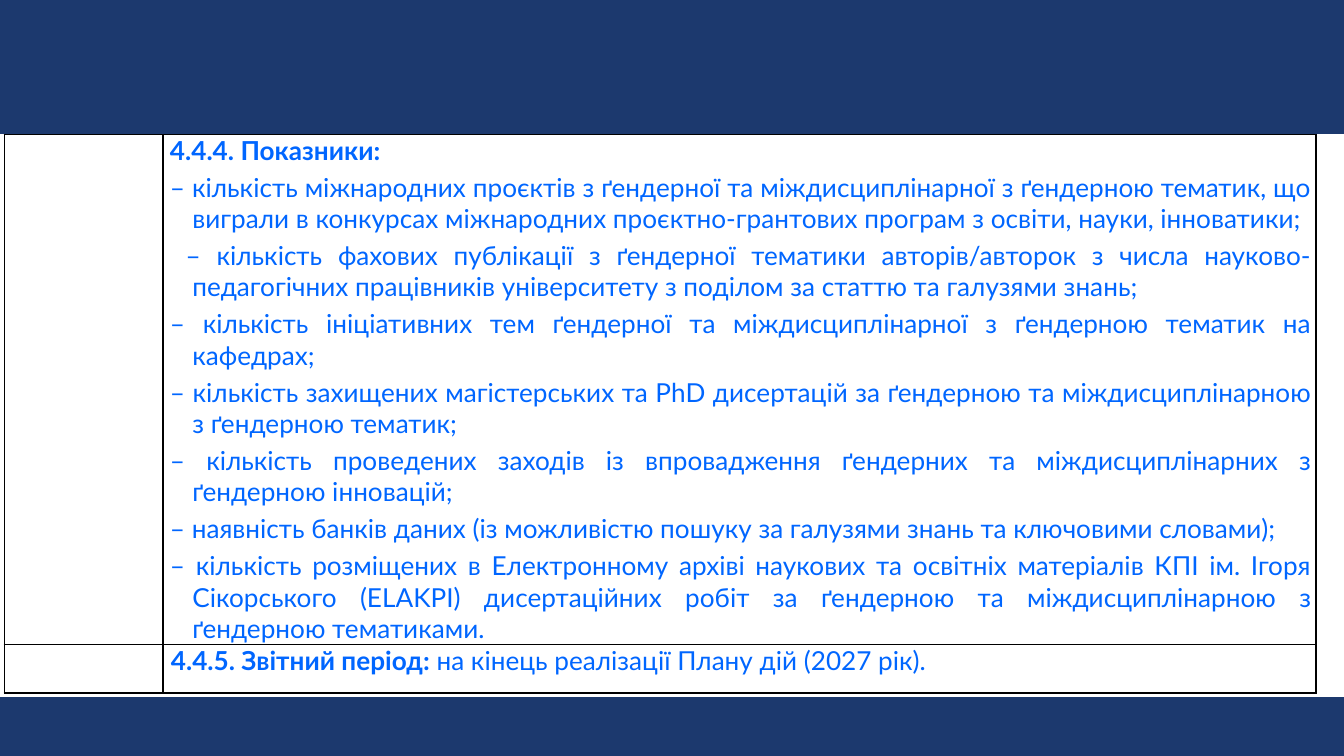
from lxml.etree import SubElement
from pptx import Presentation
from pptx.dml.color import RGBColor
from pptx.enum.shapes import MSO_SHAPE
from pptx.enum.text import PP_ALIGN
from pptx.oxml.ns import qn
from pptx.util import Pt

NAVY = RGBColor(0x1C, 0x39, 0x6E)
BLUE = RGBColor(0x00, 0x66, 0xFF)
BLACK = RGBColor(0, 0, 0)

INDICATORS_HEADING = "4.4.4. Показники:"
INDICATORS = [
    "– кількість міжнародних проєктів з ґендерної та міждисциплінарної з ґендерною тематик, "
    "що виграли в конкурсах міжнародних проєктно-грантових програм з освіти, науки, інноватики;",
    " – кількість фахових публікації з ґендерної тематики авторів/авторок з числа "
    "науково-педагогічних працівників університету з поділом за статтю та галузями знань;",
    "– кількість ініціативних тем ґендерної та міждисциплінарної з ґендерною тематик на кафедрах;",
    "– кількість захищених магістерських та PhD дисертацій за ґендерною та "
    "міждисциплінарною з ґендерною тематик;",
    "– кількість проведених заходів із впровадження ґендерних та міждисциплінарних "
    "з ґендерною інновацій;",
    "– наявність банків даних (із можливістю пошуку за галузями знань та ключовими словами);",
    "– кількість розміщених в Електронному архіві наукових та освітніх матеріалів "
    "КПІ ім. Ігоря Сікорського (ELAKPI) дисертаційних робіт за ґендерною та "
    "міждисциплінарною з ґендерною тематиками.",
]
PERIOD_HEADING = "4.4.5. Звітний період: "
PERIOD = "на кінець реалізації Плану дій (2027 рік)."


class SlideBuilder:
    font_name = "Lato"
    font_size = Pt(14)
    cell_margin = Pt(2.16)

    def __init__(self, slide):
        self.slide = slide

    def band(self, left, top, width, height):
        band = self.slide.shapes.add_shape(
            MSO_SHAPE.RECTANGLE, Pt(left), Pt(top), Pt(width), Pt(height))
        band.shadow.inherit = False
        band.fill.solid()
        band.fill.fore_color.rgb = NAVY
        band.line.color.rgb = NAVY
        band.line.width = Pt(0.75)

    def table(self, left, top, widths, heights):
        table = self.slide.shapes.add_table(
            len(heights), len(widths), Pt(left), Pt(top),
            Pt(sum(widths)), Pt(sum(heights))).table
        table.first_row = table.horz_banding = False
        for column, width in zip(table.columns, widths):
            column.width = Pt(width)
        for row, height in zip(table.rows, heights):
            row.height = Pt(height)
        for cell in table.iter_cells():
            self.format_cell(cell)
        return table

    def format_cell(self, cell):
        cell.margin_left = cell.margin_right = self.cell_margin
        cell.margin_top = cell.margin_bottom = 0
        cell.text_frame.paragraphs[0].font.size = self.font_size
        properties = cell._tc.get_or_add_tcPr()
        for side in ("a:lnL", "a:lnR", "a:lnT", "a:lnB"):
            border = SubElement(properties, qn(side), w=str(Pt(1)))
            fill = SubElement(border, qn("a:solidFill"))
            SubElement(fill, qn("a:srgbClr"), val=str(BLACK))
        cell.fill.background()

    def paragraph(self, paragraph, runs, margin, indent, align=PP_ALIGN.LEFT):
        """Fill a paragraph from (text, bold) pairs; margin and indent in points."""
        properties = paragraph._p.get_or_add_pPr()
        properties.set("marL", str(Pt(margin)))
        properties.set("indent", str(Pt(indent)))
        paragraph.alignment = align
        paragraph.space_after = Pt(3)
        paragraph.font.name = self.font_name
        paragraph.font.size = self.font_size
        paragraph.font.color.rgb = BLUE
        for text, bold in runs:
            run = paragraph.add_run()
            run.text = text
            run.font.bold = bold


def main():
    presentation = Presentation()
    presentation.slide_width, presentation.slide_height = Pt(720), Pt(405)
    builder = SlideBuilder(
        presentation.slides.add_slide(presentation.slide_layouts[6]))

    builder.band(-1.25, -0.5, 721.25, 72)
    builder.band(-1.25, 373.75, 721.25, 31)

    plan = builder.table(2.4, 72, widths=(85, 617.75), heights=(273, 26))
    indicators = plan.cell(0, 1).text_frame
    hanging = {"margin": 13.5, "indent": -12}
    builder.paragraph(
        indicators.paragraphs[0], [(INDICATORS_HEADING, True)], **hanging)
    for indicator in INDICATORS:
        builder.paragraph(indicators.add_paragraph(), [(indicator, False)],
                          align=PP_ALIGN.JUSTIFY, **hanging)
    builder.paragraph(plan.cell(1, 1).text_frame.paragraphs[0],
                      [(PERIOD_HEADING, True), (PERIOD, False)],
                      margin=0, indent=2)

    presentation.save("out.pptx")


if __name__ == "__main__":
    main()
